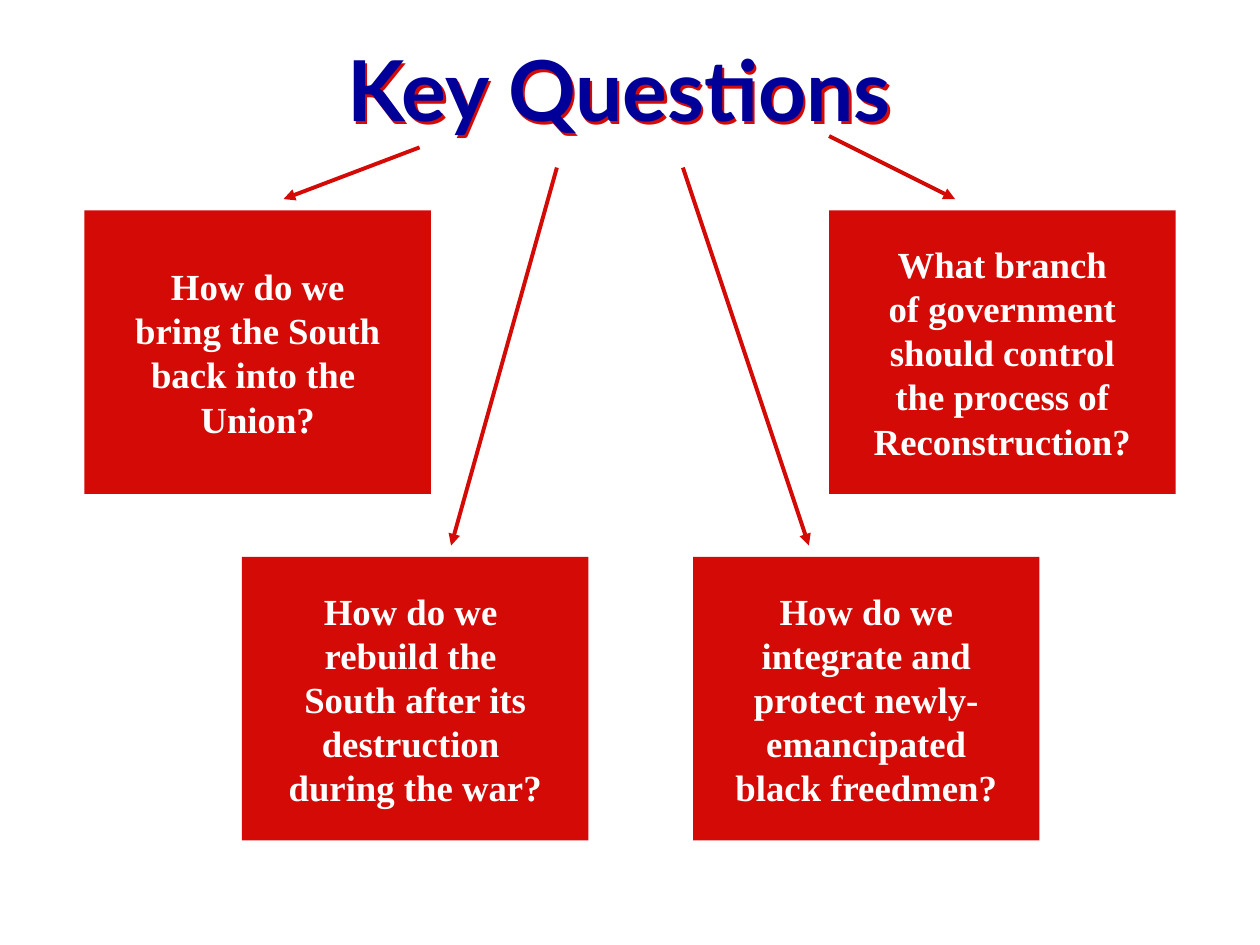
from lxml import etree
from pptx import Presentation
from pptx import util as u
from pptx.dml.color import RGBColor
from pptx.enum import shapes, text
from pptx.oxml.ns import qn

RED, NAVY, WHITE = "D30A05", "000099", "FFFFFF"


def color(value):
    return RGBColor.from_string(value)


def write(frame, words, font, size, ink, anchor, wrap):
    """Put centred bold text, with its line breaks, into a text frame."""
    frame.word_wrap = wrap
    frame.auto_size = text.MSO_AUTO_SIZE.NONE
    frame.vertical_anchor = anchor
    frame.margin_left = frame.margin_right = u.Inches(0.1)
    frame.margin_top = frame.margin_bottom = u.Inches(0.05)
    para = frame.paragraphs[0]
    para.text = words
    para.alignment = text.PP_ALIGN.CENTER
    para.line_spacing = 1.0
    para.space_before = u.Pt(0)
    for span in para.runs:
        span.font.name = font
        span.font.size = u.Pt(size)
        span.font.bold = True
        span.font.color.rgb = color(ink)


class QuestionSlide:
    heading_font, body_font = "Lato", "Times New Roman"
    box_width, box_height = 2.75, 2.25

    def __init__(self, deck):
        self.page = deck.slides.add_slide(deck.slide_layouts[5])
        self.page.background.fill.solid()
        self.page.background.fill.fore_color.rgb = color(WHITE)

    def title(self, words, left, top, width, height):
        title = self.page.shapes.title
        title.left, title.top = u.Inches(left), u.Inches(top)
        title.width, title.height = u.Inches(width), u.Inches(height)
        write(title.text_frame, words, self.heading_font, 48, NAVY,
              text.MSO_ANCHOR.TOP, True)
        # Red shadow down and to the right of the letters
        effects = etree.SubElement(title._element.spPr, qn("a:effectLst"))
        shadow = etree.SubElement(effects, qn("a:outerShdw"), blurRad="0",
                                  dist=str(u.Pt(2)), dir="2700000",
                                  algn="ctr", rotWithShape="0")
        etree.SubElement(shadow, qn("a:srgbClr"), val=RED)

    def question(self, words, left, top):
        box = self.page.shapes.add_shape(
            shapes.MSO_SHAPE.RECTANGLE, u.Inches(left), u.Inches(top),
            u.Inches(self.box_width), u.Inches(self.box_height))
        box.shadow.inherit = False
        box.fill.solid()
        box.fill.fore_color.rgb = color(RED)
        box.line.fill.background()
        write(box.text_frame, words, self.body_font, 21, WHITE,
              text.MSO_ANCHOR.MIDDLE, False)

    def arrow(self, start, end):
        points = [u.Inches(value) for value in (*start, *end)]
        arrow = self.page.shapes.add_connector(
            shapes.MSO_CONNECTOR.STRAIGHT, *points)
        arrow.line.color.rgb = color(RED)
        arrow.line.width = u.Pt(2.25)
        etree.SubElement(arrow.line._get_or_add_ln(), qn("a:tailEnd"),
                         type="triangle")
        etree.SubElement(arrow._element.spPr, qn("a:effectLst"))


def main():
    deck = Presentation()
    deck.slide_width, deck.slide_height = u.Inches(10), u.Inches(7.5)
    slide = QuestionSlide(deck)
    slide.title("Key Questions", 0.33, 0.25, 9.17, 0.9)

    # Question boxes: outer pair above, inner pair below
    upper, lower = 1.67, 4.42
    questions = [
        ("How do we\nbring the South\nback into the \nUnion?", 0.67, upper),
        ("How do we \nrebuild the \nSouth after its\ndestruction \n"
         "during the war?", 1.92, lower),
        ("How do we\nintegrate and\nprotect newly-\nemancipated\n"
         "black freedmen?", 5.5, lower),
        ("What branch\nof government\nshould control\nthe process of\n"
         "Reconstruction?", 6.58, upper),
    ]
    for words, left, top in questions:
        slide.question(words, left, top)

    # Arrows from the title to each box
    arrows = [
        ((3.33, 1.17), (2.25, 1.58)),
        ((4.42, 1.33), (3.58, 4.33)),
        ((5.42, 1.33), (6.42, 4.33)),
        ((6.58, 1.08), (7.58, 1.58)),
    ]
    for start, end in arrows:
        slide.arrow(start, end)

    deck.save("out.pptx")


if __name__ == "__main__":
    main()
